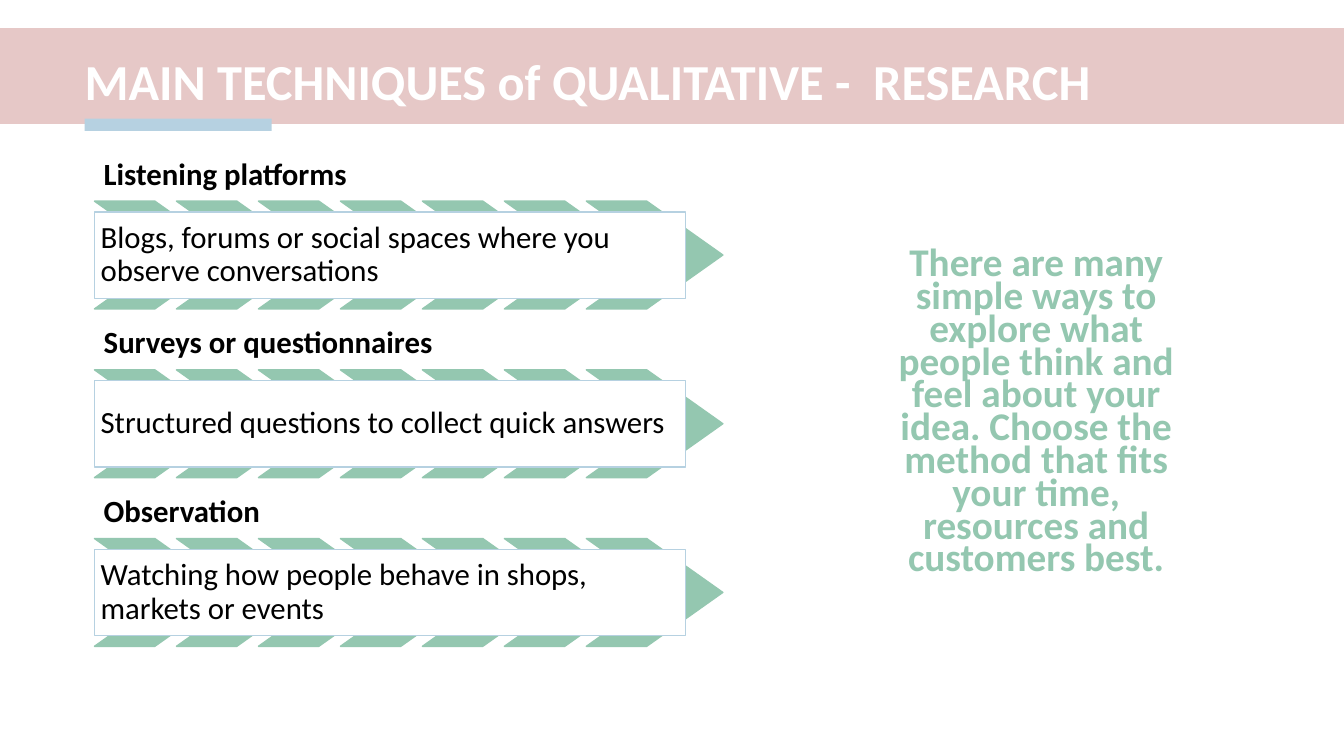
import pptx
import pptx.util
import pptx.dml.color
import pptx.enum.shapes
import pptx.enum.text

Pt = pptx.util.Pt
RGB = pptx.dml.color.RGBColor
SHAPE = pptx.enum.shapes.MSO_SHAPE
ALIGN = pptx.enum.text.PP_ALIGN
ANCHOR = pptx.enum.text.MSO_ANCHOR

# Content
TITLE = "MAIN TECHNIQUES of QUALITATIVE -  RESEARCH"
METHODS = [
    ("Listening platforms",
     "Blogs, forums or social spaces where you observe conversations"),
    ("Surveys or questionnaires",
     "Structured questions to collect quick answers"),
    ("Observation",
     "Watching how people behave in shops, markets or events"),
]
ADVICE = ("There are many simple ways to explore what people think and feel "
          "about your idea. Choose the method that fits your time, resources "
          "and customers best.")

# Colours
PINK = RGB(0xE6, 0xC8, 0xC7)
BLUE = RGB(0xB6, 0xD1, 0xE1)
GREEN = RGB(0x94, 0xC7, 0xB0)
WHITE = RGB(0xFF, 0xFF, 0xFF)
BLACK = RGB(0, 0, 0)

# Layout
WIDE, HIGH = 960, 540
LEFT = 67.5
TOP = 105.7         # top of the first heading
ROW = 120.5         # step from one method to the next
STEP = 58.56        # step from one chevron to the next
CHEVRONS = 7


def draw(kind, x, y, w, h, fill, line=None):
    shape = slide.shapes.add_shape(kind, Pt(x), Pt(y), Pt(w), Pt(h))
    shape.shadow.inherit = False
    shape.fill.solid()
    shape.fill.fore_color.rgb = fill
    if line is None:
        shape.line.fill.background()
    else:
        shape.line.color.rgb = line
        shape.line.width = Pt(1)
    return shape


def add_box(x, y, w, h):
    return slide.shapes.add_textbox(Pt(x), Pt(y), Pt(w), Pt(h))


def write(shape, text, size, color, bold=False, align=ALIGN.LEFT,
          anchor=ANCHOR.MIDDLE, inset=None, space=0.9):
    frame = shape.text_frame
    frame.text = text
    frame.word_wrap = True
    frame.auto_size = pptx.enum.text.MSO_AUTO_SIZE.NONE
    frame.vertical_anchor = anchor
    if inset is not None:
        frame.margin_left = frame.margin_right = Pt(inset)
        frame.margin_top = frame.margin_bottom = Pt(inset)
    para = frame.paragraphs[0]
    para.alignment = align
    para.line_spacing = space
    para.space_before = Pt(0)
    font = para.runs[0].font
    font.name = "Calibri"
    font.size = Pt(size)
    font.bold = bold
    font.color.rgb = color


deck = pptx.Presentation()
deck.slide_width, deck.slide_height = Pt(WIDE), Pt(HIGH)
slide = deck.slides.add_slide(deck.slide_layouts[5])

# Title on its band, with the accent bar
draw(SHAPE.RECTANGLE, 0, 20, WIDE, 68.5, PINK)
draw(SHAPE.RECTANGLE, 60.5, 84.7, 133.5, 8.8, BLUE)
title = slide.shapes.title
title.left, title.top = Pt(53.3), Pt(31.5)
title.width, title.height = Pt(859), Pt(57)
write(title, TITLE, 36, WHITE, bold=True)
slide.shapes._spTree.append(title._element)  # bring in front of the band

# Methods: heading, row of chevrons, description
for row, (name, detail) in enumerate(METHODS):
    y = TOP + row * ROW
    head = add_box(LEFT, y, 417, 38)
    write(head, name, 22, BLACK, bold=True, anchor=ANCHOR.BOTTOM, inset=6.6)
    for col in range(CHEVRONS):
        mark = draw(SHAPE.CHEVRON, LEFT + col * STEP, y + 38, 97.5, 77,
                    GREEN, GREEN)
        mark.adjustments[0] = 0.706
    card = draw(SHAPE.RECTANGLE, LEFT, y + 45.7, 422, 61.8, WHITE, BLUE)
    write(card, detail, 22, BLACK, inset=4.4)

# Advice
side = add_box(615.6, 176.4, 249, 241)
write(side, ADVICE, 28, GREEN, bold=True, align=ALIGN.CENTER,
      anchor=ANCHOR.TOP, space=Pt(23.4))

deck.save("out.pptx")
